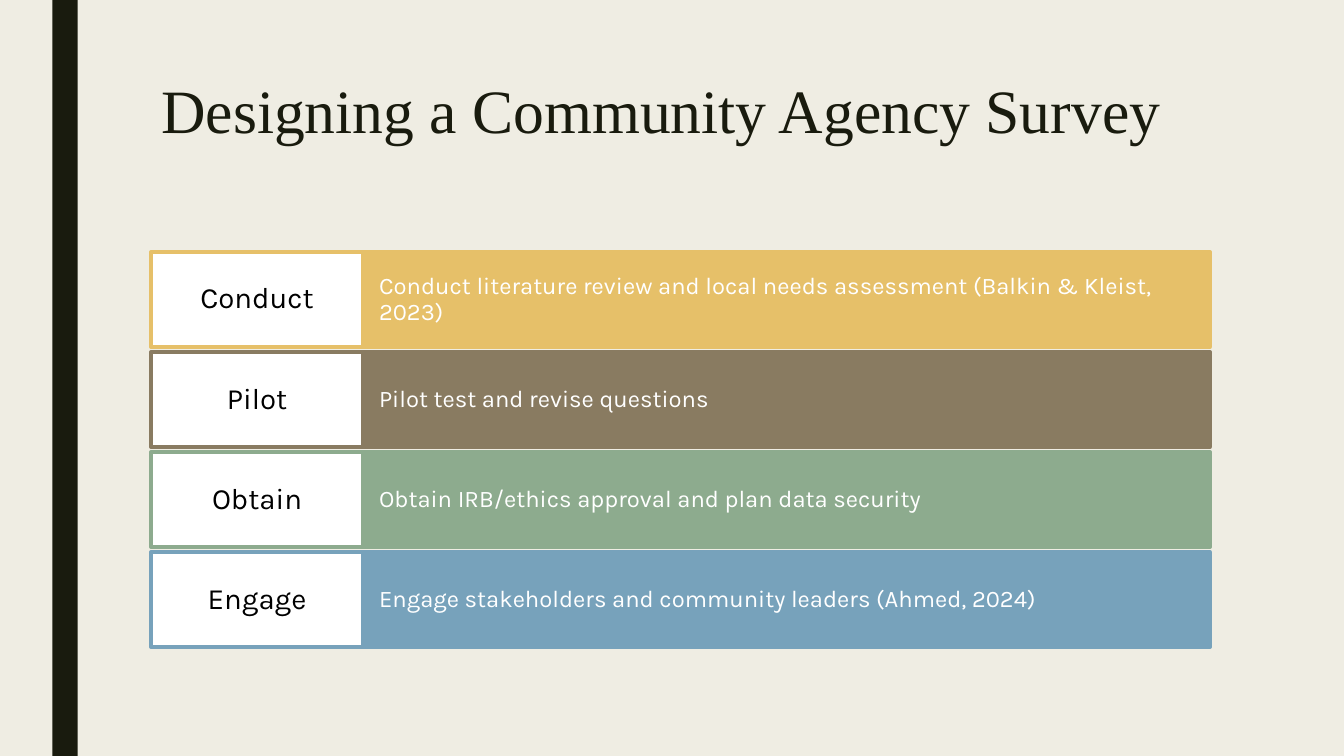
from pptx import Presentation
from pptx.dml.color import RGBColor
from pptx.enum.shapes import MSO_SHAPE
from pptx.enum.text import MSO_ANCHOR, PP_ALIGN
from pptx.util import Inches, Pt

COLORS = {
    "back": "EFEDE3", "ink": "191B0E", "white": "FFFFFF", "black": "000000",
    "gold": "E6C069", "brown": "897B61", "green": "8DAB8E", "blue": "77A2BB",
}
STEPS = [
    ("Conduct", "Conduct literature review and local needs assessment "
                "(Balkin & Kleist, 2023)", "gold"),
    ("Pilot", "Pilot test and revise questions", "brown"),
    ("Obtain", "Obtain IRB/ethics approval and plan data security", "green"),
    ("Engage", "Engage stakeholders and community leaders (Ahmed, 2024)", "blue"),
]


def color(name):
    return RGBColor.from_string(COLORS[name])


def write(shape, text, size, ink, font="Karla", align=PP_ALIGN.LEFT,
          anchor=MSO_ANCHOR.MIDDLE, inset=(0.1, 0.05), spacing=0.9):
    frame = shape.text_frame
    frame.word_wrap = True
    frame.vertical_anchor = anchor
    frame.margin_left = frame.margin_right = Inches(inset[0])
    frame.margin_top = frame.margin_bottom = Inches(inset[1])
    para = frame.paragraphs[0]
    para.alignment = align
    para.line_spacing = spacing
    run = para.add_run()
    run.text = text
    run.font.size = Pt(size)
    run.font.name = font
    run.font.color.rgb = color(ink)


def block(slide, box, fill, edge=None):
    shape = slide.shapes.add_shape(MSO_SHAPE.RECTANGLE, *map(Inches, box))
    shape.shadow.inherit = False
    shape.fill.solid()
    shape.fill.fore_color.rgb = color(fill)
    if edge:
        shape.line.color.rgb = color(edge)
        shape.line.width = Pt(2.75)
    else:
        shape.line.fill.background()
    return shape


def heading(slide, box, text):
    title = slide.shapes.title
    title.left, title.top, title.width, title.height = map(Inches, box)
    write(title, text, 44, "ink", font="Times New Roman",
          anchor=MSO_ANCHOR.TOP, spacing=0.89)


def step_list(slide, box, steps, gap=0.05, share=0.2):
    left, top, width, height = box
    pitch = (height + gap) / len(steps)
    label = width * share
    for i, (verb, detail, hue) in enumerate(steps):
        y, tall = top + i * pitch, pitch - gap
        # Coloured description, then the white label beside it
        bar = block(slide, (left + label, y, width - label, tall), hue, hue)
        write(bar, detail, 17, "white", inset=(0.16, 0.24))
        tag = block(slide, (left, y, label, tall), "white", hue)
        write(tag, verb, 21, "black", align=PP_ALIGN.CENTER, inset=(0.11, 0.09))


def main():
    deck = Presentation()
    deck.slide_width, deck.slide_height = Inches(13.33), Inches(7.5)
    slide = deck.slides.add_slide(deck.slide_layouts[5])
    slide.background.fill.solid()
    slide.background.fill.fore_color.rgb = color("back")

    # Side stripe, title and steps
    block(slide, (0.52, 0, 0.25, 7.5), "ink")
    heading(slide, (1.5, 0.75, 10.5, 1.62), "Designing a Community Agency Survey")
    step_list(slide, (1.5, 2.5, 10.5, 3.92), STEPS)
    deck.save("out.pptx")


if __name__ == "__main__":
    main()
